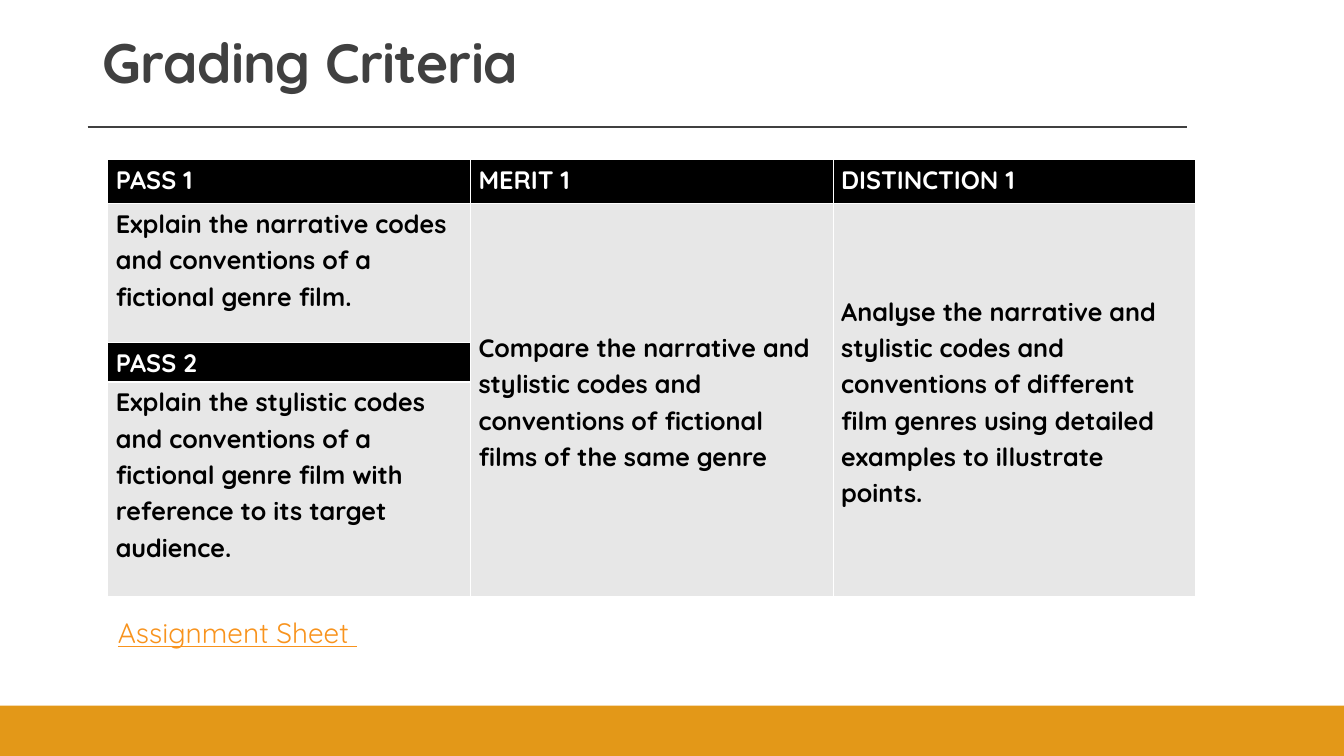
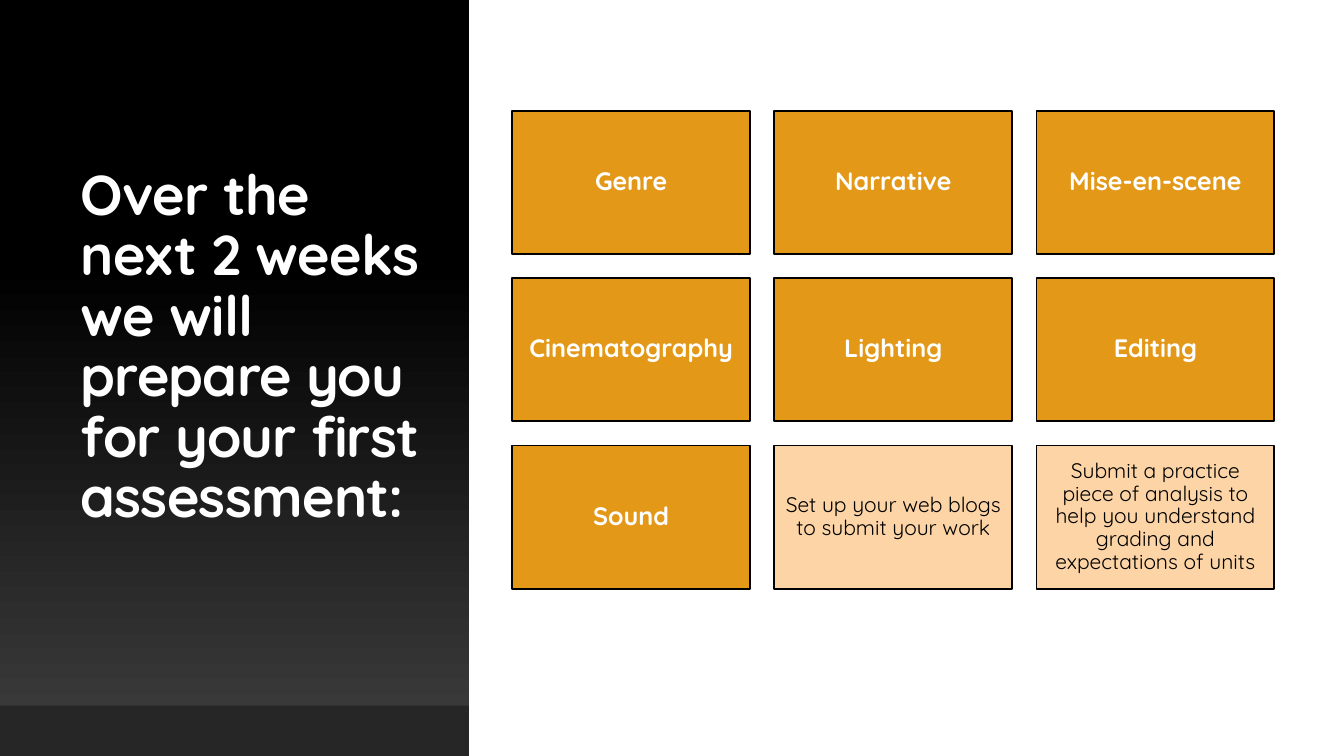
import pptx
import pptx.util
import pptx.dml.color
import pptx.enum.shapes
import pptx.enum.text

Inches, Pt = pptx.util.Inches, pptx.util.Pt
RGB = pptx.dml.color.RGBColor
ANCHOR = pptx.enum.text.MSO_ANCHOR
ALIGN = pptx.enum.text.PP_ALIGN
SHAPE = pptx.enum.shapes.MSO_SHAPE

FONT = "Quicksand"
WHITE = RGB(0xFF, 0xFF, 0xFF)
BLACK = RGB(0, 0, 0)
ORANGE = RGB(0xE3, 0x98, 0x18)
PEACH = RGB(0xFC, 0xD4, 0xA5)
LINK = RGB(0xF8, 0x93, 0x1D)
DARK = RGB(0x40, 0x40, 0x40)
CHARCOAL = RGB(0x3F, 0x3F, 0x3F)
FOOT = RGB(0x26, 0x26, 0x26)
GRAY = RGB(0xE7, 0xE7, 0xE7)

SLIDE_W, SLIDE_H, BAND_H, PANEL_W = 13.33, 7.5, 0.5, 4.65

CRITERIA = [
    ("PASS 1", "MERIT 1", "DISTINCTION 1"),
    ("Explain the narrative codes and conventions of a fictional genre film.",
     "Compare the narrative and stylistic codes and conventions of fictional "
     "films of the same genre",
     "Analyse the narrative and stylistic codes and conventions of different "
     "film genres using detailed examples to illustrate points."),
    ("PASS 2", "", ""),
    ("Explain the stylistic codes and conventions of a fictional genre film "
     "with reference to its target audience.", "", ""),
]
ROW_HEIGHTS = [0.44, 1.38, 0.39, 2.13]
HEADER_ROWS = (0, 2)

TOPICS = ["Genre", "Narrative", "Mise-en-scene", "Cinematography", "Lighting",
          "Editing", "Sound"]
TASKS = ["Set up your web blogs to submit your work",
         "Submit a practice piece of analysis to help you understand grading "
         "and expectations of units"]


def box(*lengths):
    return [Inches(v) for v in lengths]


def style(p, size, color, bold=False, align=ALIGN.LEFT, spacing=None):
    p.alignment = align
    p.line_spacing = spacing
    f = p.font
    f.name, f.size, f.bold = FONT, Pt(size), bold
    f.color.rgb = color
    return f


def add_rect(slide, x, y, w, h, color=None):
    sp = slide.shapes.add_shape(SHAPE.RECTANGLE, *box(x, y, w, h))
    sp.shadow.inherit = False
    sp.line.fill.background()
    if color is not None:
        sp.fill.solid()
        sp.fill.fore_color.rgb = color
    return sp


def add_band(slide, width, color):
    add_rect(slide, 0, SLIDE_H - BAND_H, width, BAND_H, color)


def set_title(slide, text, place, size, color, anchor):
    title = slide.shapes.title
    title.left, title.top, title.width, title.height = box(*place)
    tf = title.text_frame
    tf.text = text
    tf.word_wrap = True
    tf.auto_size = pptx.enum.text.MSO_AUTO_SIZE.NONE
    tf.vertical_anchor = anchor
    f = style(tf.paragraphs[0], size, color, bold=True, spacing=0.9)
    f._rPr.set("spc", "-50")


def add_criteria_table(slide):
    rows, cols = len(CRITERIA), len(CRITERIA[0])
    table = slide.shapes.add_table(
        rows, cols, *box(1.07, 1.58, 10.79, sum(ROW_HEIGHTS))).table
    table.horz_banding = False
    for row, height in zip(table.rows, ROW_HEIGHTS):
        row.height = Inches(height)
    for c in range(1, cols):
        table.cell(1, c).merge(table.cell(rows - 1, c))
    for r, texts in enumerate(CRITERIA):
        for c, text in enumerate(texts):
            cell = table.cell(r, c)
            if cell.is_spanned:
                continue
            header = r in HEADER_ROWS
            cell.text = text
            cell.margin_left = cell.margin_right = Inches(0.08)
            cell.margin_top = cell.margin_bottom = 0
            if cell.is_merge_origin:
                cell.vertical_anchor = ANCHOR.MIDDLE
            cell.fill.solid()
            cell.fill.fore_color.rgb = BLACK if header else GRAY
            style(cell.text_frame.paragraphs[0], 18,
                  WHITE if header else BLACK, bold=True, spacing=1.15)


def build_grading(slide):
    add_band(slide, SLIDE_W, ORANGE)
    rule = slide.shapes.add_connector(
        pptx.enum.shapes.MSO_CONNECTOR.STRAIGHT, *box(0.87, 1.26, 11.77, 1.26))
    rule.line.color.rgb = DARK
    rule.line.width = Pt(1)
    rule._element.spPr.append(
        pptx.oxml.parse_xml('<a:effectLst xmlns:a="http://schemas.'
                            'openxmlformats.org/drawingml/2006/main"/>'))
    set_title(slide, "Grading Criteria", (0.92, 0.29, 9.32, 0.71), 39.6, DARK,
              ANCHOR.BOTTOM)
    add_criteria_table(slide)
    tf = slide.shapes.add_textbox(*box(1.07, 6.06, 4.41, 0.44)).text_frame
    tf.word_wrap = True
    tf.text = "Assignment Sheet "
    style(tf.paragraphs[0], 20, LINK).underline = True


def add_card(slide, index, text, fill, color, size, bold):
    w, h, gap, cols = 2.36, 1.42, 0.24, 3
    row, col = divmod(index, cols)
    sp = add_rect(slide, 5.08 + col * (w + gap), 1.1 + row * (h + gap), w, h, fill)
    sp.line.color.rgb = BLACK
    sp.line.width = Pt(1.25)
    tf = sp.text_frame
    tf.word_wrap = True
    tf.vertical_anchor = ANCHOR.MIDDLE
    tf.margin_left = tf.margin_right = Inches(0.07)
    tf.margin_top = tf.margin_bottom = Inches(0.07)
    tf.text = text
    style(tf.paragraphs[0], size, color, bold, ALIGN.CENTER, 0.9)


def build_plan(slide):
    panel = add_rect(slide, 0, 0, PANEL_W, SLIDE_H)
    panel.fill.gradient()
    panel.fill.gradient_angle = 90
    stops = [(0, CHARCOAL), (0.65, BLACK)]
    for stop, (position, color) in zip(panel.fill.gradient_stops, stops):
        stop.position = position
        stop.color.rgb = color
    slide.shapes._spTree.insert(2, panel._element)
    set_title(slide, "Over the next 2 weeks we will prepare you\v"
              "for your first assessment:", (0.7, 0.69, 3.69, 5.53), 40, WHITE,
              ANCHOR.MIDDLE)
    add_band(slide, PANEL_W, FOOT)
    cards = [(t, ORANGE, WHITE, 18, True) for t in TOPICS]
    cards += [(t, PEACH, BLACK, 15, False) for t in TASKS]
    for i, card in enumerate(cards):
        add_card(slide, i, *card)


def main():
    prs = pptx.Presentation()
    prs.slide_width, prs.slide_height = box(SLIDE_W, SLIDE_H)
    title_only = prs.slide_layouts[5]
    for build in (build_grading, build_plan):
        build(prs.slides.add_slide(title_only))
    prs.save("out.pptx")


if __name__ == "__main__":
    main()
